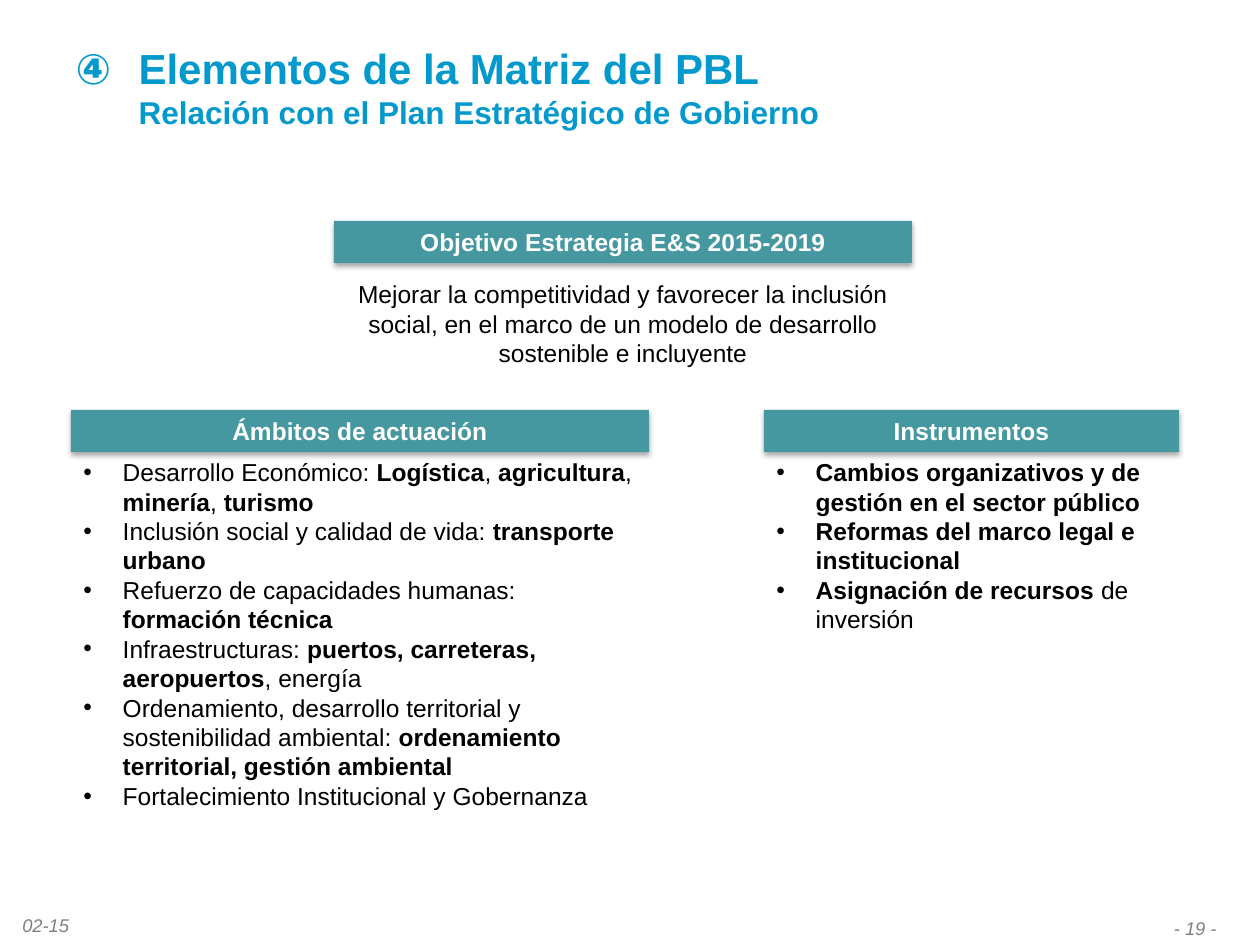
import pptx
import pptx.dml.color
import pptx.enum.shapes
import pptx.enum.text
import pptx.oxml.ns
import pptx.util
from lxml import etree

PX = 914400 / 126
COLORS = {"teal": "4597A0", "blue": "0399CD", "gray": "7F7F7F", "white": "FFFFFF", "black": "000000"}
ALIGN = pptx.enum.text.PP_ALIGN


def place(shape, left, top, width, height):
    bounds = {"left": left, "top": top, "width": width, "height": height}
    for name, value in bounds.items():
        setattr(shape, name, round(value * PX))


def write(para, text, color, align=ALIGN.LEFT, **formats):
    para.alignment = align
    for index, part in enumerate(text.split("*")):
        if part:
            span = para.add_run()
            span.text = part
            values = {"name": "Arial", "size": pptx.util.Pt(14), "bold": index % 2 == 1, **formats}
            for name, value in values.items():
                setattr(span.font, name, value)
            span.font.color.rgb = pptx.dml.color.RGBColor.from_string(COLORS[color])


qn = pptx.oxml.ns.qn
deck = pptx.Presentation()
deck.slide_width = round(1260 * PX)
deck.slide_height = round(945 * PX)
page = deck.slides.add_slide(deck.slide_layouts[5])

title = page.shapes.title
place(title, 63, 0, 1124, 173)
title.text_frame.auto_size = pptx.enum.text.MSO_AUTO_SIZE.NONE
title.text_frame.vertical_anchor = pptx.enum.text.MSO_ANCHOR.MIDDLE
para = title.text_frame.paragraphs[0]
props = para._p.get_or_add_pPr()
props.set("marL", "457200")
props.set("indent", "-457200")
etree.SubElement(props, qn("a:buFont"), typeface="+mj-lt")
etree.SubElement(props, qn("a:buAutoNum"), type="circleNumDbPlain", startAt="4")
write(para, "Elementos de la Matriz del PBL", "blue", size=pptx.util.Pt(24), bold=True)
para.add_line_break()
write(para, "Relación con el Plan Estratégico de Gobierno", "blue", size=pptx.util.Pt(18), bold=True)

footers = [
    ("02-15", (10, 908, 136, 37), ALIGN.LEFT),
    ("- 19 -", (1113, 911, 116, 34), ALIGN.RIGHT),
]
for text, bounds, align in footers:
    box = page.shapes.add_textbox(0, 0, 0, 0)
    place(box, *bounds)
    box.text_frame.word_wrap = True
    write(box.text_frame.paragraphs[0], text, "gray", align, size=pptx.util.Pt(10.5), italic=True)

headers = [
    ("Objetivo Estrategia E&S 2015-2019", 334, 221, 578),
    ("Ámbitos de actuación", 71, 410, 578),
    ("Instrumentos", 764, 410, 415),
]
for text, left, top, width in headers:
    bar = page.shapes.add_shape(pptx.enum.shapes.MSO_SHAPE.RECTANGLE, 0, 0, 0, 0)
    place(bar, left, top, width, 42)
    bar.fill.solid()
    bar.fill.fore_color.rgb = pptx.dml.color.RGBColor.from_string(COLORS["teal"])
    bar.line.fill.background()
    bar.shadow.inherit = False
    effects = bar.element.spPr.find(qn("a:effectLst"))
    shadow = etree.SubElement(
        effects, qn("a:outerShdw"), blurRad="40000", dist="23000", dir="5400000", rotWithShape="0"
    )
    shade = etree.SubElement(shadow, qn("a:srgbClr"), val=COLORS["black"])
    etree.SubElement(shade, qn("a:alpha"), val="35000")
    bar.text_frame.word_wrap = True
    write(bar.text_frame.paragraphs[0], text, "white", ALIGN.CENTER, bold=True)

areas = [
    "Desarrollo Económico: *Logística*, *agricultura*, *minería*, *turismo*",
    "Inclusión social y calidad de vida: *transporte urbano*",
    "Refuerzo de capacidades humanas: *formación técnica*",
    "Infraestructuras: *puertos, carreteras, aeropuertos*, energía",
    "Ordenamiento, desarrollo territorial y sostenibilidad ambiental:"
    "* ordenamiento territorial, gestión ambiental*",
    "Fortalecimiento Institucional y Gobernanza",
]
instruments = [
    "*Cambios organizativos y de gestión en el sector público*",
    "*Reformas del marco legal e institucional*",
    "*Asignación de recursos *de inversión",
]
for items, bounds in [(areas, (71, 451, 578, 369)), (instruments, (764, 451, 415, 190))]:
    box = page.shapes.add_textbox(0, 0, 0, 0)
    place(box, *bounds)
    frame = box.text_frame
    frame.word_wrap = True
    for index, item in enumerate(items):
        para = frame.add_paragraph() if index else frame.paragraphs[0]
        props = para._p.get_or_add_pPr()
        props.set("marL", "285750")
        props.set("indent", "-285750")
        etree.SubElement(props, qn("a:buFont"), typeface="Arial")
        etree.SubElement(props, qn("a:buChar"), char="•")
        write(para, item, "black")

goal = page.shapes.add_textbox(0, 0, 0, 0)
place(goal, 334, 273, 578, 102)
goal.text_frame.word_wrap = True
write(
    goal.text_frame.paragraphs[0],
    "Mejorar la competitividad y favorecer la inclusión social, "
    "en el marco de un modelo de desarrollo sostenible e incluyente",
    "black",
    ALIGN.CENTER,
)

deck.save("out.pptx")
